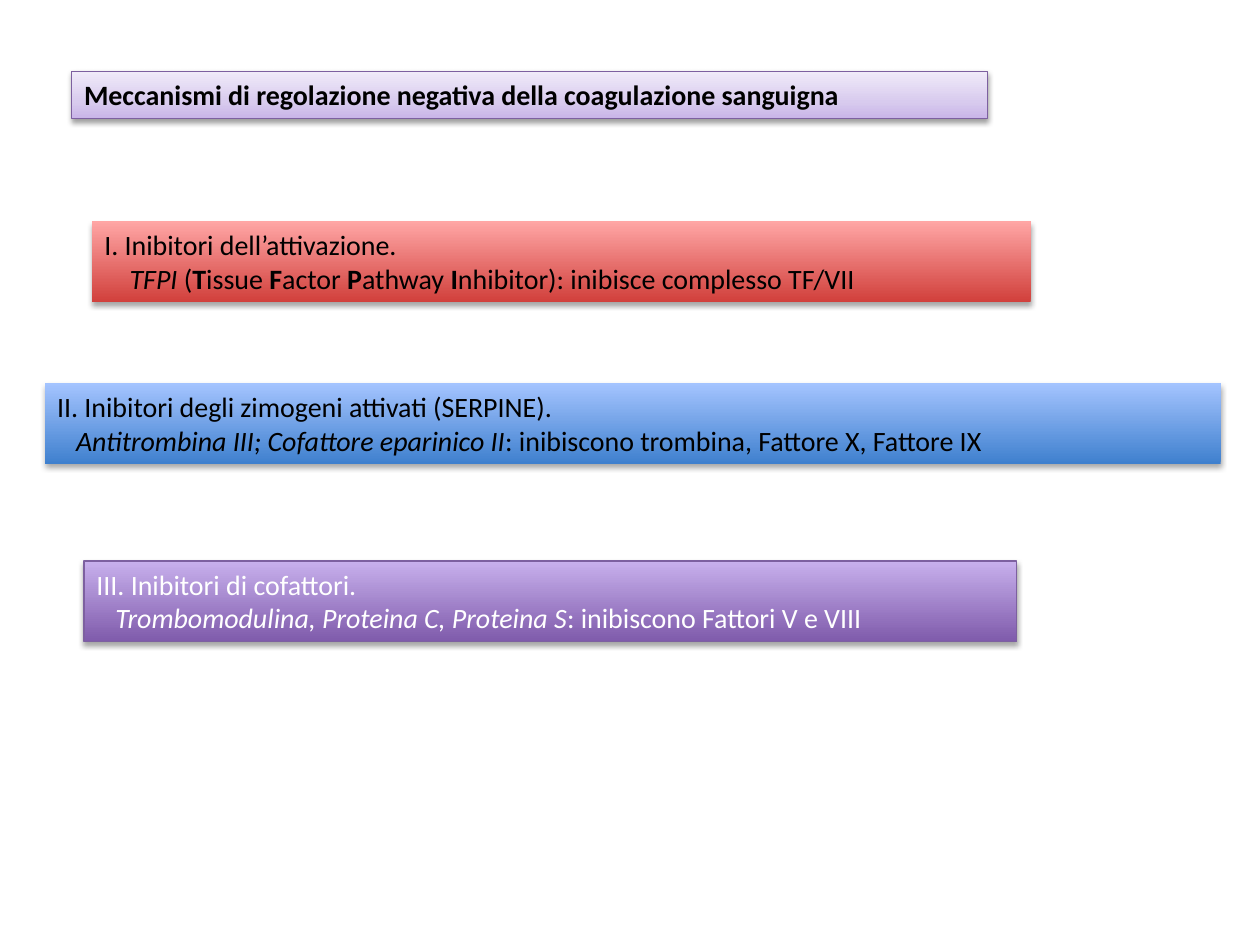
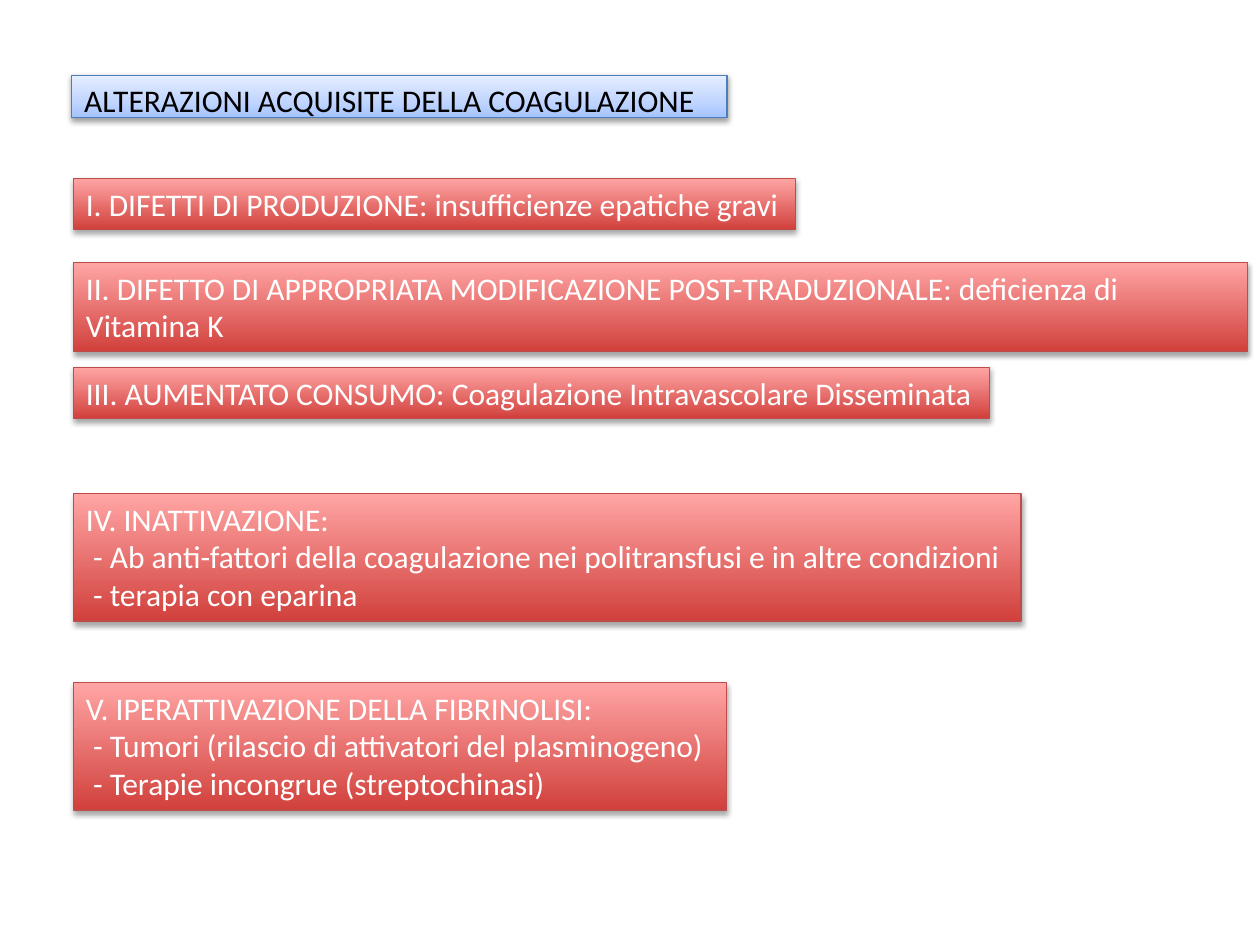
from dataclasses import dataclass

from lxml.etree import SubElement
from pptx import Presentation
from pptx.dml.color import RGBColor as Rgb
from pptx.enum.shapes import MSO_SHAPE as Shape
from pptx.enum.text import MSO_ANCHOR as Anchor, MSO_AUTO_SIZE as AutoSize, PP_ALIGN as Align
from pptx.oxml.ns import qn
from pptx.util import Pt


@dataclass(frozen=True)
class Look:
    stops: tuple  # (percent from the bottom edge, colour)
    text: str
    line: str = ""
    shadow: tuple = (1.8, 35)  # distance in points, opacity in percent


class Theme:
    font = "Calibri"
    small, large = 16, 18
    line_height = 1.216
    inset_x, inset_y = 7.2, 3.6
    line_width = 0.75
    shadow_blur = 3.1
    black, white = "000000", "FFFFFF"
    red = ((0, "D1403C"), (100, "FFA6A5"))
    looks = {
        "pale violet": Look(((0, "C9B5E8"), (35, "D8CBEE"), (100, "F0EAF9")),
                            black, "7D60A0", (1.6, 38)),
        "pale blue": Look(((0, "A4C4FF"), (35, "BFD4FF"), (100, "E6EEFF")),
                          black, "4B7EBC", (1.6, 38)),
        "plain red": Look(red, black),
        "outlined red": Look(red, white, "BF4C48"),
        "blue": Look(((0, "3F80CE"), (100, "A4C4FF")), black),
        "violet": Look(((0, "7F5BAB"), (100, "C8B0ED")), white, "7D60A0"),
    }


# A line is a list of spans: plain text, or (text, "b" for bold / "i" for italic).
TITLE_LEFT = 41
REGULATION_TITLE = [[("Meccanismi di regolazione negativa della coagulazione sanguigna", "b")]]
# look, left, top, width, indent of the second line, lines
INHIBITORS = [
    ("plain red", 52.5, 126.5, 536.5, 14.5, [
        ["I. Inibitori dell’attivazione."],
        [("TFPI", "i"), " (", ("T", "b"), "issue ", ("F", "b"), "actor ", ("P", "b"),
         "athway ", ("I", "b"), "nhibitor): inibisce complesso TF/VII"]]),
    ("blue", 25.5, 219, 672, 10.85, [
        ["II. Inibitori degli zimogeni attivati (SERPINE)."],
        [("Antitrombina III; Cofattore eparinico II", "i"),
         ": inibiscono trombina, Fattore X, Fattore IX"]]),
    ("violet", 48, 320.5, 533, 10.85, [
        ["III. Inibitori di cofattori."],
        [("Trombomodulina, Proteina C, Proteina S", "i"), ": inibiscono Fattori V e VIII"]]),
]

ALTERATIONS_TITLE = [["ALTERAZIONI ACQUISITE DELLA COAGULAZIONE"]]
ALTERATIONS_LEFT, DASH_INDENT = 42, 4.07
# top, width, rows of text, lines
ALTERATIONS = [
    (102, 412.5, 1, [["I. DIFETTI DI PRODUZIONE: insufficienze epatiche gravi"]]),
    (150, 671, 2, [["II. DIFETTO DI APPROPRIATA MODIFICAZIONE POST-TRADUZIONALE: "
                    "deficienza di Vitamina K"]]),
    (210, 523.5, 1, [["III. AUMENTATO CONSUMO: Coagulazione Intravascolare Disseminata"]]),
    (282, 541.5, 3, [
        ["IV. INATTIVAZIONE:"],
        ["- Ab anti-fattori della coagulazione nei politransfusi e in altre condizioni"],
        ["- terapia con eparina"]]),
    (390, 373, 3, [
        ["V. IPERATTIVAZIONE DELLA FIBRINOLISI:"],
        ["- Tumori (rilascio di attivatori del plasminogeno)"],
        ["- Terapie incongrue (streptochinasi)"]]),
]


def box_height(rows, size):
    return rows * size * Theme.line_height + 2 * Theme.inset_y


def add_colour(parent, colour):
    return SubElement(parent, qn("a:srgbClr"), val=colour)


def paint(box, look):
    box.fill.gradient()
    box.fill.gradient_angle = 90
    stop_list = next(box._element.spPr.iter(qn("a:gsLst")))
    stop_list.clear()
    for percent, colour in look.stops:
        add_colour(SubElement(stop_list, qn("a:gs"), pos=str(percent * 1000)), colour)
    if look.line:
        box.line.color.rgb = Rgb.from_string(look.line)
        box.line.width = Pt(Theme.line_width)
    else:
        box.line.fill.background()
    box.shadow.inherit = False
    distance, opacity = look.shadow
    shadow = SubElement(box._element.spPr.find(qn("a:effectLst")), qn("a:outerShdw"),
                        blurRad=str(Pt(Theme.shadow_blur)), dist=str(Pt(distance)),
                        dir="5400000", rotWithShape="0")
    SubElement(add_colour(shadow, Theme.black), qn("a:alpha"), val=str(opacity * 1000))


def write(frame, lines, size, colour, indent):
    """Fill the frame; every line after the first is indented."""
    frame.word_wrap = True
    frame.auto_size = AutoSize.NONE
    frame.vertical_anchor = Anchor.TOP
    frame.margin_left = frame.margin_right = Pt(Theme.inset_x)
    frame.margin_top = frame.margin_bottom = Pt(Theme.inset_y)
    for number, spans in enumerate(lines):
        para = frame.add_paragraph() if number else frame.paragraphs[0]
        para.alignment = Align.LEFT
        para.font.name = Theme.font
        para.font.size = Pt(size)
        para.font.color.rgb = Rgb.from_string(colour)
        if number:
            para._p.get_or_add_pPr().set("marL", str(Pt(indent)))
        for part in spans:
            text, style = (part, "") if isinstance(part, str) else part
            span = para.add_run()
            span.text = text
            if style == "b":
                span.font.bold = True
            elif style == "i":
                span.font.italic = True


def add_box(page, look_name, left, top, width, height, lines, size, indent=0):
    look = Theme.looks[look_name]
    box = page.shapes.add_shape(Shape.RECTANGLE, Pt(left), Pt(top), Pt(width), Pt(height))
    paint(box, look)
    write(box.text_frame, lines, size, look.text, indent)


def build_regulation(page):
    size = Theme.small
    add_box(page, "pale violet", TITLE_LEFT, 41, 523.5, box_height(1, size),
            REGULATION_TITLE, size)
    for look_name, left, top, width, indent, lines in INHIBITORS:
        add_box(page, look_name, left, top, width, box_height(len(lines), size),
                lines, size, indent)


def build_alterations(page):
    size = Theme.large
    add_box(page, "pale blue", TITLE_LEFT, 43, 374.5, 24, ALTERATIONS_TITLE, size)
    for top, width, rows, lines in ALTERATIONS:
        add_box(page, "outlined red", ALTERATIONS_LEFT, top, width, box_height(rows, size),
                lines, size, DASH_INDENT)


def main():
    deck = Presentation()
    deck.slide_width, deck.slide_height = Pt(720), Pt(540)
    for build in (build_regulation, build_alterations):
        build(deck.slides.add_slide(deck.slide_layouts[6]))
    deck.save("out.pptx")


if __name__ == "__main__":
    main()
